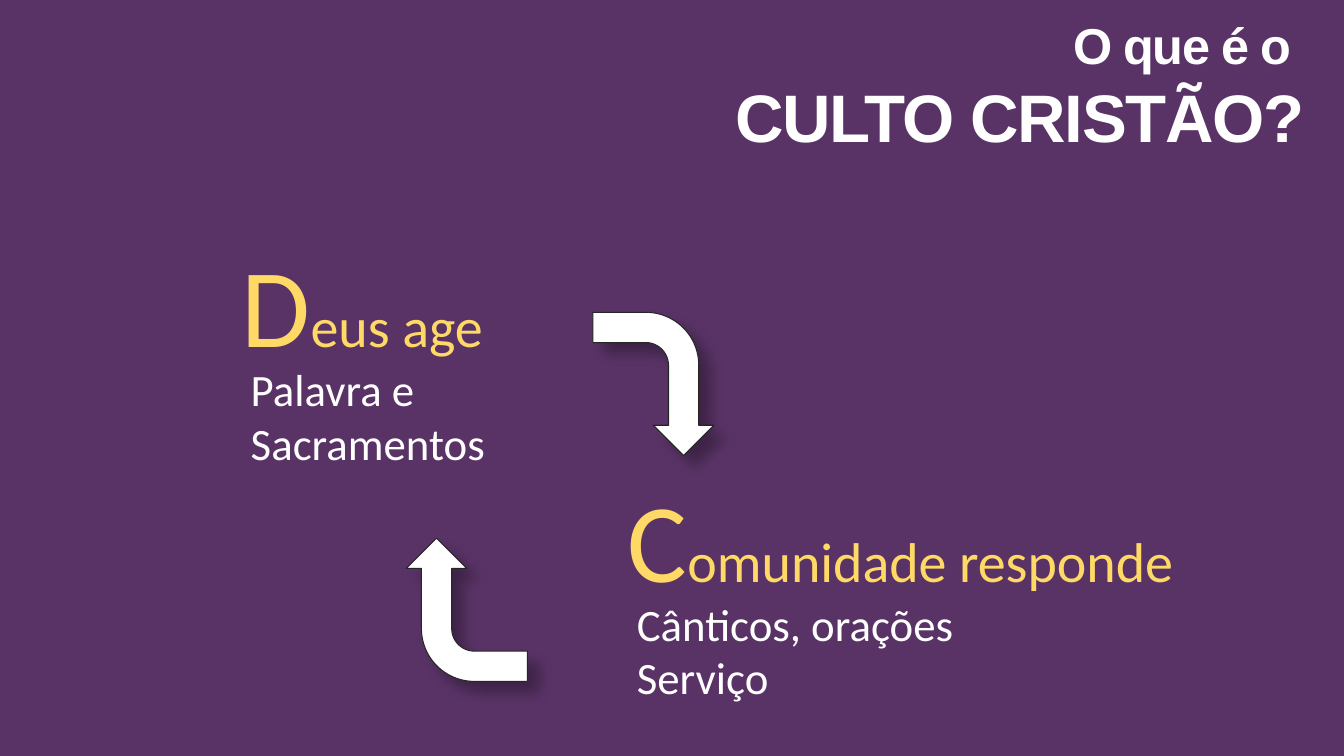
from dataclasses import dataclass

from lxml import etree
from pptx import Presentation
from pptx.dml.color import RGBColor
from pptx.enum.shapes import MSO_SHAPE
from pptx.enum.text import MSO_ANCHOR, PP_ALIGN
from pptx.oxml.ns import qn
from pptx.util import Cm, Pt

BENT_ARROW = MSO_SHAPE.BENT_ARROW
MIDDLE = MSO_ANCHOR.MIDDLE
RIGHT = PP_ALIGN.RIGHT


@dataclass(frozen=True)
class Theme:
    background: RGBColor = RGBColor(0x59, 0x33, 0x66)
    white: RGBColor = RGBColor(0xFF, 0xFF, 0xFF)
    yellow: RGBColor = RGBColor(0xFF, 0xD9, 0x66)
    outline: RGBColor = RGBColor(0x26, 0x26, 0x26)
    title_font: str = "Arial"
    body_font: str = "Calibri"
    initial: int = 80
    heading: int = 40
    detail: int = 32


THEME = Theme()

TITLE = [("O que é o ", 36, 0.9), ("CULTO CRISTÃO?", 48, 1.0)]
STEPS = [
    {
        "heading": "Deus age",
        "details": ["Palavra e Sacramentos"],
        "position": (5.84, 5.82),
        "widths": (9.5, 9.5),
        "arrow": (14.66, 8.15, 90),
    },
    {
        "heading": "Comunidade responde",
        "details": ["Cânticos, orações", "Serviço"],
        "position": (15.57, 11.73),
        "widths": (15.14, 12.85),
        "arrow": (9.96, 13.84, 270),
    },
]
HEADING_HEIGHT, DETAIL_HEIGHT = 3.68, 3.0
DETAIL_OFFSET = (0.23, 3.17)
ARROW_SIZE = (3.61, 3.05)


def add_title(slide):
    title = slide.shapes.title
    title.left, title.top, title.width, title.height = Cm(0), Cm(-0.03), Cm(33.87), Cm(4.5)
    frame = title.text_frame
    frame.word_wrap = True
    frame.vertical_anchor = MIDDLE
    frame.margin_left = frame.margin_right = Cm(1)
    frame.text = "\n".join(text for text, size, spacing in TITLE)
    for paragraph, (text, size, spacing) in zip(frame.paragraphs, TITLE):
        paragraph.alignment = RIGHT
        paragraph.line_spacing = spacing
        format_font(paragraph.font, size, THEME.white, THEME.title_font)
        paragraph.font.bold = True
        for run in paragraph.runs:
            run.font._element.set("spc", "-100")


def format_font(font, size, color, name=THEME.body_font):
    font.name = name
    font.size = Pt(size)
    font.color.rgb = color


def add_text_frame(group, left, top, width, height):
    box = group.shapes.add_textbox(Cm(left), Cm(top), Cm(width), Cm(height))
    box.text_frame.word_wrap = True
    return box.text_frame


def add_heading(group, text, left, top, width):
    paragraph = add_text_frame(group, left, top, width, HEADING_HEIGHT).paragraphs[0]
    for part, size in ((text[0], THEME.initial), (text[1:], THEME.heading)):
        run = paragraph.add_run()
        run.text = part
        format_font(run.font, size, THEME.yellow)


def add_details(group, lines, left, top, width):
    frame = add_text_frame(group, left, top, width, DETAIL_HEIGHT)
    frame.text = "\n".join(lines)
    for paragraph in frame.paragraphs:
        format_font(paragraph.font, THEME.detail, THEME.white)


def add_arrow(group, left, top, rotation):
    width, height = ARROW_SIZE
    arrow = group.shapes.add_shape(BENT_ARROW, Cm(left), Cm(top), Cm(width), Cm(height))
    arrow.rotation = rotation
    arrow.fill.solid()
    arrow.fill.fore_color.rgb = THEME.white
    arrow.line.color.rgb = THEME.outline
    arrow.line.width = Pt(0.75)
    arrow.shadow.inherit = False
    effects = arrow._element.spPr.find(qn("a:effectLst"))
    shadow = etree.SubElement(
        effects, qn("a:outerShdw"), blurRad=str(Pt(10)), dist=str(Pt(11)),
        dir="2700000", algn="tl", rotWithShape="0",
    )
    color = etree.SubElement(shadow, qn("a:srgbClr"), val="000000")
    etree.SubElement(color, qn("a:alpha"), val="30000")


def add_step(slide, step):
    group = slide.shapes.add_group_shape()
    left, top = step["position"]
    heading_width, detail_width = step["widths"]
    shift_x, shift_y = DETAIL_OFFSET
    add_details(group, step["details"], left + shift_x, top + shift_y, detail_width)
    add_heading(group, step["heading"], left, top, heading_width)
    add_arrow(group, *step["arrow"])


def main():
    presentation = Presentation()
    presentation.slide_width, presentation.slide_height = Cm(33.87), Cm(19.05)
    slide = presentation.slides.add_slide(presentation.slide_layouts[5])
    slide.background.fill.solid()
    slide.background.fill.fore_color.rgb = THEME.background
    add_title(slide)
    for step in STEPS:
        add_step(slide, step)
    presentation.save("out.pptx")


if __name__ == "__main__":
    main()
